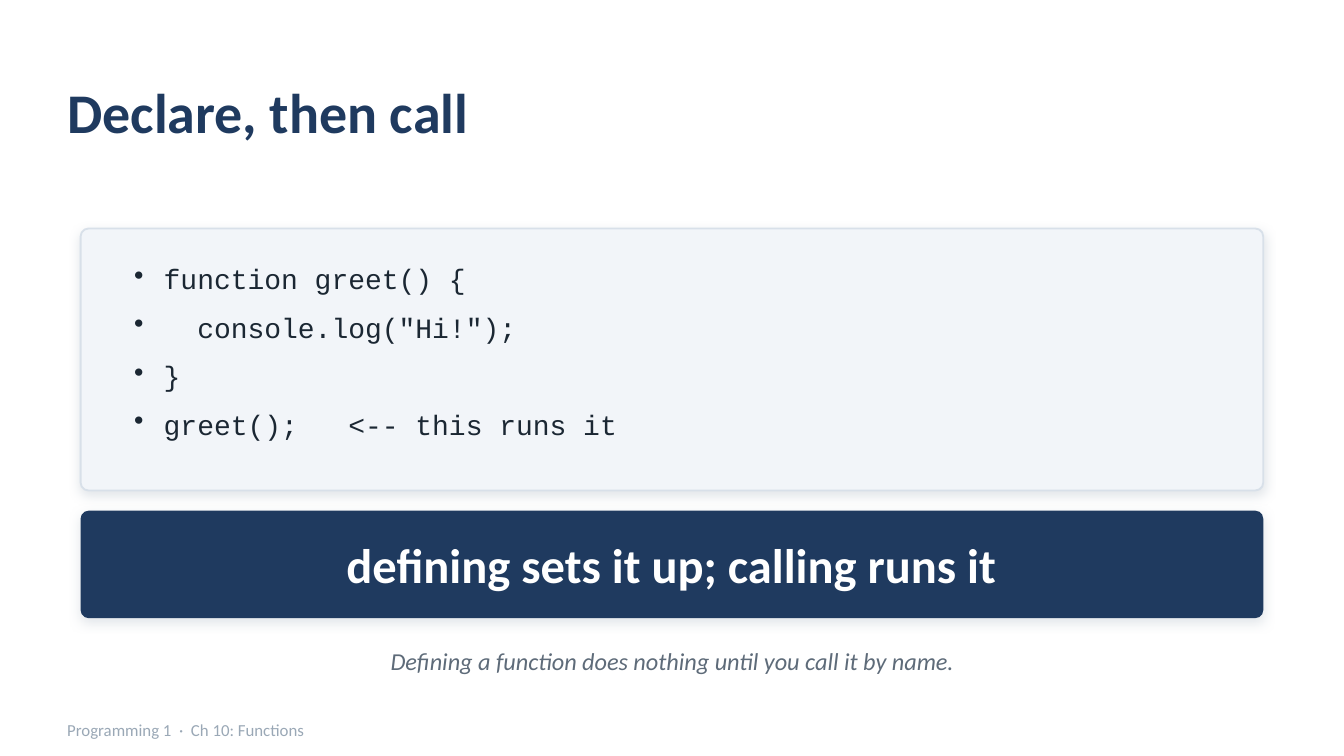
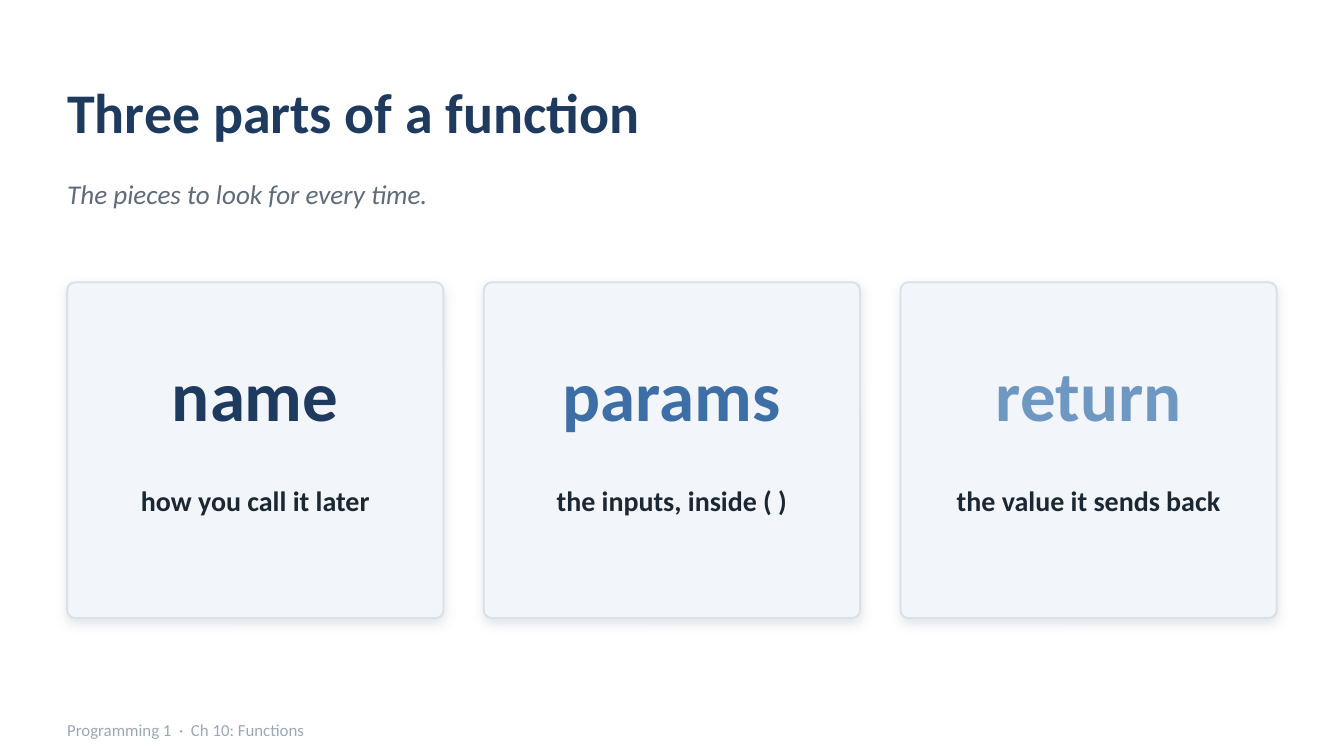
from lxml.etree import SubElement
from pptx import Presentation
from pptx.dml.color import RGBColor
from pptx.enum.shapes import MSO_SHAPE
from pptx.enum.text import MSO_ANCHOR, MSO_AUTO_SIZE, PP_ALIGN
from pptx.oxml import parse_xml
from pptx.oxml.ns import nsdecls, qn
from pptx.util import Pt


class Theme:
    navy = "1F3A5F"
    blue = "3D6EA5"
    sky = "6E97C2"
    ink = "1B2733"
    gray = "5E6B79"
    mist = "9AA8B6"
    panel = "F2F5F9"
    edge = "D8E0E9"
    white = "FFFFFF"
    sans = "Calibri"
    mono = "Courier New"
    title = 30
    lead = 14.5
    key = 38
    banner = 26
    body = 15
    note = 13
    foot = 9
    radius = 4.32


def write(slide, text, box, size, color, bold=False, italic=False,
          align=PP_ALIGN.CENTER, anchor=MSO_ANCHOR.MIDDLE, shape=None):
    """Set one line of text in the given shape, or in a new text box."""
    shape = shape or slide.shapes.add_textbox(0, 0, 0, 0)
    shape.left, shape.top, shape.width, shape.height = map(Pt, box)
    frame = shape.text_frame
    frame.word_wrap = True
    frame.auto_size = MSO_AUTO_SIZE.NONE
    frame.vertical_anchor = anchor
    frame.margin_left = frame.margin_right = 0
    frame.margin_top = frame.margin_bottom = 0
    line = frame.paragraphs[0]
    line.alignment = align
    run = line.add_run()
    run.text = text
    font = run.font
    font.name, font.size = Theme.sans, Pt(size)
    font.bold, font.italic = bold, italic
    font.color.rgb = RGBColor.from_string(color)


def card(slide, box, fill, edge=None):
    """Add a rounded panel with a soft shadow below it."""
    shape = slide.shapes.add_shape(MSO_SHAPE.ROUNDED_RECTANGLE, *map(Pt, box))
    shape.adjustments[0] = Theme.radius / min(box[2:])
    shape.fill.solid()
    shape.fill.fore_color.rgb = RGBColor.from_string(fill)
    if edge:
        shape.line.color.rgb = RGBColor.from_string(edge)
        shape.line.width = Pt(1)
    else:
        shape.line.fill.background()
    shape.shadow.inherit = False
    glow = shape._element.spPr.find(qn("a:effectLst"))
    glow.append(parse_xml(
        f'<a:outerShdw {nsdecls("a")} blurRad="{Pt(6)}" dist="{Pt(2)}" '
        f'dir="5400000" algn="ctr" rotWithShape="0"><a:srgbClr val="{Theme.mist}">'
        '<a:alpha val="28000"/></a:srgbClr></a:outerShdw>'))


deck = Presentation()
deck.slide_width, deck.slide_height = Pt(720), Pt(405)

# Title and footer on every slide
pages = []
for title in ("Declare, then call", "Three parts of a function"):
    page = deck.slides.add_slide(deck.slide_layouts[5])
    write(page, title, (36, 28.8, 648, 61.2), Theme.title, Theme.navy, bold=True,
          align=PP_ALIGN.LEFT, shape=page.shapes.title)
    write(page, "Programming 1  ·  Ch 10: Functions", (36, 381.6, 576, 18.72),
          Theme.foot, Theme.mist, align=PP_ALIGN.LEFT)
    pages.append(page)
call, parts = pages

# Slide 1: code panel, banner and note
card(call, (43.2, 122.4, 633.6, 140.4), Theme.panel, Theme.edge)
code = call.shapes.add_textbox(Pt(64.8), Pt(136.8), Pt(590.4), Pt(115.2)).text_frame
code.word_wrap = True
lines = ("function greet() {", '  console.log("Hi!");', "}",
         "greet();   <-- this runs it")
for i, text in enumerate(lines):
    line = code.add_paragraph() if i else code.paragraphs[0]
    props = line._p.get_or_add_pPr()
    props.set("marL", str(Pt(15.84)))
    props.set("indent", str(-Pt(15.84)))
    SubElement(props, qn("a:buChar"), char="•")
    line.space_after = Pt(8)
    run = line.add_run()
    run.text = text
    run.font.name, run.font.size = Theme.mono, Pt(Theme.body)
    run.font.color.rgb = RGBColor.from_string(Theme.ink)

card(call, (43.2, 273.6, 633.6, 57.6), Theme.navy)
write(call, "defining sets it up; calling runs it", (43.2, 275.76, 633.6, 53.28),
      Theme.banner, Theme.white, bold=True)
write(call, "Defining a function does nothing until you call it by name.",
      (43.2, 339.84, 633.6, 28.8), Theme.note, Theme.gray, italic=True)

# Slide 2: three equal cards
write(parts, "The pieces to look for every time.", (36, 89.28, 648, 28.8),
      Theme.lead, Theme.gray, italic=True, align=PP_ALIGN.LEFT)
cells = (("name", "how you call it later", Theme.navy),
         ("params", "the inputs, inside ( )", Theme.blue),
         ("return", "the value it sends back", Theme.sky))
wide, gap = 201.6, 21.6
for i, (key, text, color) in enumerate(cells):
    left = 36 + i * (wide + gap)
    card(parts, (left, 151.2, wide, 180), Theme.panel, Theme.edge)
    write(parts, key, (left + 7.2, 176.4, wide - 14.4, 68.4), Theme.key, color, bold=True)
    write(parts, text, (left + 10.8, 259.2, wide - 21.6, 57.6), Theme.body, Theme.ink,
          bold=True, anchor=MSO_ANCHOR.TOP)

deck.save("out.pptx")
